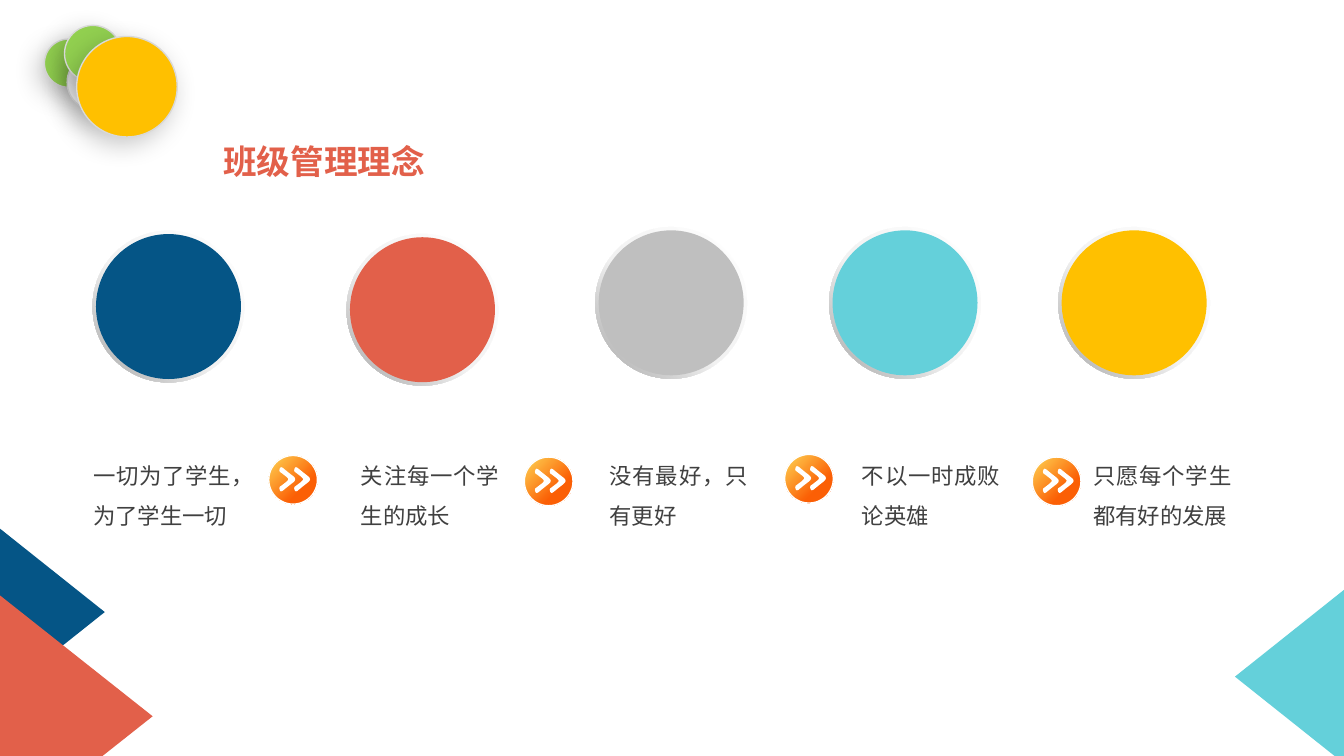
from dataclasses import dataclass
from typing import Any

from lxml.etree import SubElement
from pptx import Presentation
from pptx.dml.color import RGBColor
from pptx.enum.shapes import MSO_SHAPE
from pptx.enum.text import MSO_AUTO_SIZE, PP_ALIGN
from pptx.oxml.ns import qn
from pptx.util import Cm, Pt

FONT = "Noto Sans CJK SC"
BLUE, RED, CYAN, YELLOW = "055586", "E2604A", "64D0DA", "FFC000"
GREEN, GREY, WHITE, EDGE = "92D050", "BFBFBF", "FFFFFF", "D9D9D9"
RING_SIZE, FACE_SIZE, DISC_SIZE = 2.87, 2.74, 0.92
TEXT_TOP = 8.38


@dataclass
class Gradient:
    stops: list[tuple[int, str]]
    angle: int


@dataclass
class Triangle:
    left: float
    top: float
    width: float
    height: float
    rotation: int
    color: str


@dataclass
class Bubble:
    left: float
    top: float
    size: float
    fill: str | Gradient


@dataclass
class Idea:
    ring_left: float
    ring_top: float
    color: str
    text_left: float
    text: str


@dataclass
class Arrow:
    left: float
    top: float


RING = Gradient([(0, WHITE), (55, "F2F2F2"), (100, "A6A6A6")], 135)
ORANGE = Gradient([(0, "FED755"), (69, "FB5F05")], 45)
SILVER = Gradient([(0, GREY), (18, "C6C6C6"), (61, "EEEEEE"), (100, "F5F5F5")], 130)

TRIANGLES = [
    Triangle(-0.69, 10.54, 3.28, 2.06, 90, BLUE),
    Triangle(-0.99, 12.04, 4.75, 3, 90, RED),
    Triangle(22.73, 11.76, 3.28, 2.06, 270, CYAN),
]
BUBBLES = [
    Bubble(0.84, 0.74, 0.91, GREEN),
    Bubble(1.27, 1.02, 1.07, SILVER),
    Bubble(1.22, 0.48, 1.07, GREEN),
    Bubble(1.45, 0.69, 1.9, YELLOW),
]
IDEAS = [
    Idea(1.75, 4.36, BLUE, 1.57, "一切为了学生，为了学生一切"),
    Idea(6.55, 4.42, RED, 6.63, "关注每一个学生的成长"),
    Idea(11.25, 4.29, GREY, 11.33, "没有最好，只有更好"),
    Idea(15.67, 4.29, CYAN, 16.1, "不以一时成败论英雄"),
    Idea(20, 4.29, YELLOW, 20.47, "只愿每个学生都有好的发展"),
]
ARROWS = [Arrow(5.08, 8.61), Arrow(9.91, 8.64), Arrow(14.83, 8.59), Arrow(19.51, 8.64)]

OUTER = [(0, 7), (1, 3), (3, 1), (6, 2), (17, 11), (26, 18), (29, 21), (30, 24)]
INNER = [(17, 24), (16, 22), (13, 19), (4, 12), (1, 10)]
MIRROR = 48
CHEVRON = (OUTER + [(x, MIRROR - y) for x, y in reversed(OUTER[:-1])]
           + [(x, MIRROR - y) for x, y in reversed(INNER[1:])] + INNER)


def rgb(color: str) -> RGBColor:
    return RGBColor.from_string(color)


def paint(s: Any, fill: str | Gradient, line: str | None = None) -> None:
    s.shadow.inherit = False
    if isinstance(fill, Gradient):
        s.fill.background()
        props = s._element.spPr
        grad = SubElement(props, qn("a:gradFill"), rotWithShape="1")
        stops = SubElement(grad, qn("a:gsLst"))
        for position, color in fill.stops:
            stop = SubElement(stops, qn("a:gs"), pos=str(position * 1000))
            SubElement(stop, qn("a:srgbClr"), val=color)
        SubElement(grad, qn("a:lin"), ang=str(fill.angle * 60000), scaled="0")
        props.replace(props.find(qn("a:noFill")), grad)
    else:
        s.fill.solid()
        s.fill.fore_color.rgb = rgb(fill)
    if line:
        s.line.color.rgb = rgb(line)
        s.line.width = Pt(0.75)
    else:
        s.line.fill.background()


def add_shape(shapes: Any, kind: MSO_SHAPE, left: float, top: float, width: float,
              height: float, fill: str | Gradient, line: str | None = None) -> Any:
    s = shapes.add_shape(kind, Cm(left), Cm(top), Cm(width), Cm(height))
    paint(s, fill, line)
    return s


def add_shadow(s: Any) -> None:
    effects = s._element.spPr.find(qn("a:effectLst"))
    shadow = SubElement(effects, qn("a:outerShdw"), blurRad=str(Pt(14)), dist=str(Pt(5)),
                        dir=str(130 * 60000), algn="ctr", rotWithShape="0")
    color = SubElement(shadow, qn("a:srgbClr"), val="000000")
    SubElement(color, qn("a:alpha"), val="22000")


def add_text(shapes: Any, left: float, top: float, width: float, height: float, text: str,
             color: str, frame: dict[str, Any], para: dict[str, Any],
             font: dict[str, Any]) -> None:
    tf = shapes.add_textbox(Cm(left), Cm(top), Cm(width), Cm(height)).text_frame
    p = tf.paragraphs[0]
    r = p.add_run()
    r.text = text
    for target, values in ((tf, frame), (p, para), (r.font, font)):
        for name, value in values.items():
            setattr(target, name, value)
    r.font.color.rgb = rgb(color)
    SubElement(r.font._element, qn("a:ea"), typeface=FONT)


def add_idea(shapes: Any, idea: Idea) -> None:
    group = shapes.add_group_shape().shapes
    ring = add_shape(group, MSO_SHAPE.DONUT, idea.ring_left, idea.ring_top,
                     RING_SIZE, RING_SIZE, RING)
    ring.adjustments[0] = 0.05
    inset = (RING_SIZE - FACE_SIZE) / 2
    add_shape(group, MSO_SHAPE.OVAL, idea.ring_left + inset, idea.ring_top + inset,
              FACE_SIZE, FACE_SIZE, idea.color)
    add_text(shapes, idea.text_left, TEXT_TOP, 3, 1.73, idea.text, "404040",
             {"word_wrap": True, "auto_size": MSO_AUTO_SIZE.SHAPE_TO_FIT_TEXT,
              "margin_left": Cm(0.19), "margin_right": Cm(0.19),
              "margin_top": Cm(0.1), "margin_bottom": Cm(0.1)},
             {"alignment": PP_ALIGN.JUSTIFY, "line_spacing": 1.5},
             {"name": FONT, "size": Pt(12)})


def add_arrow(shapes: Any, arrow: Arrow) -> None:
    group = shapes.add_group_shape().shapes
    add_shape(group, MSO_SHAPE.OVAL, arrow.left, arrow.top, DISC_SIZE, DISC_SIZE,
              ORANGE, WHITE)
    for offset in (0.48, 0.2):
        points = [(Cm(arrow.left + offset + x / 100), Cm(arrow.top + 0.21 + y / 100))
                  for x, y in CHEVRON]
        builder = group.build_freeform(*points[0])
        builder.add_line_segments(points[1:])
        paint(builder.convert_to_shape(), WHITE)


def main() -> None:
    prs = Presentation()
    prs.slide_width, prs.slide_height = Cm(25.4), Cm(14.29)
    shapes = prs.slides.add_slide(prs.slide_layouts[6]).shapes
    for t in TRIANGLES:
        s = add_shape(shapes, MSO_SHAPE.ISOSCELES_TRIANGLE, t.left, t.top,
                      t.width, t.height, t.color)
        s.rotation = t.rotation
    group = shapes.add_group_shape().shapes
    for b in BUBBLES:
        add_shadow(add_shape(group, MSO_SHAPE.OVAL, b.left, b.top, b.size, b.size,
                             b.fill, EDGE))
    add_text(shapes, 3.94, 2.62, 4.37, 0.94, "班级管理理念", RED,
             {"word_wrap": False, "auto_size": MSO_AUTO_SIZE.SHAPE_TO_FIT_TEXT},
             {"alignment": PP_ALIGN.CENTER, "line_spacing": 0.9},
             {"name": FONT, "size": Pt(18), "bold": True})
    for idea in IDEAS:
        add_idea(shapes, idea)
    for arrow in ARROWS:
        add_arrow(shapes, arrow)
    prs.save("out.pptx")


if __name__ == "__main__":
    main()
